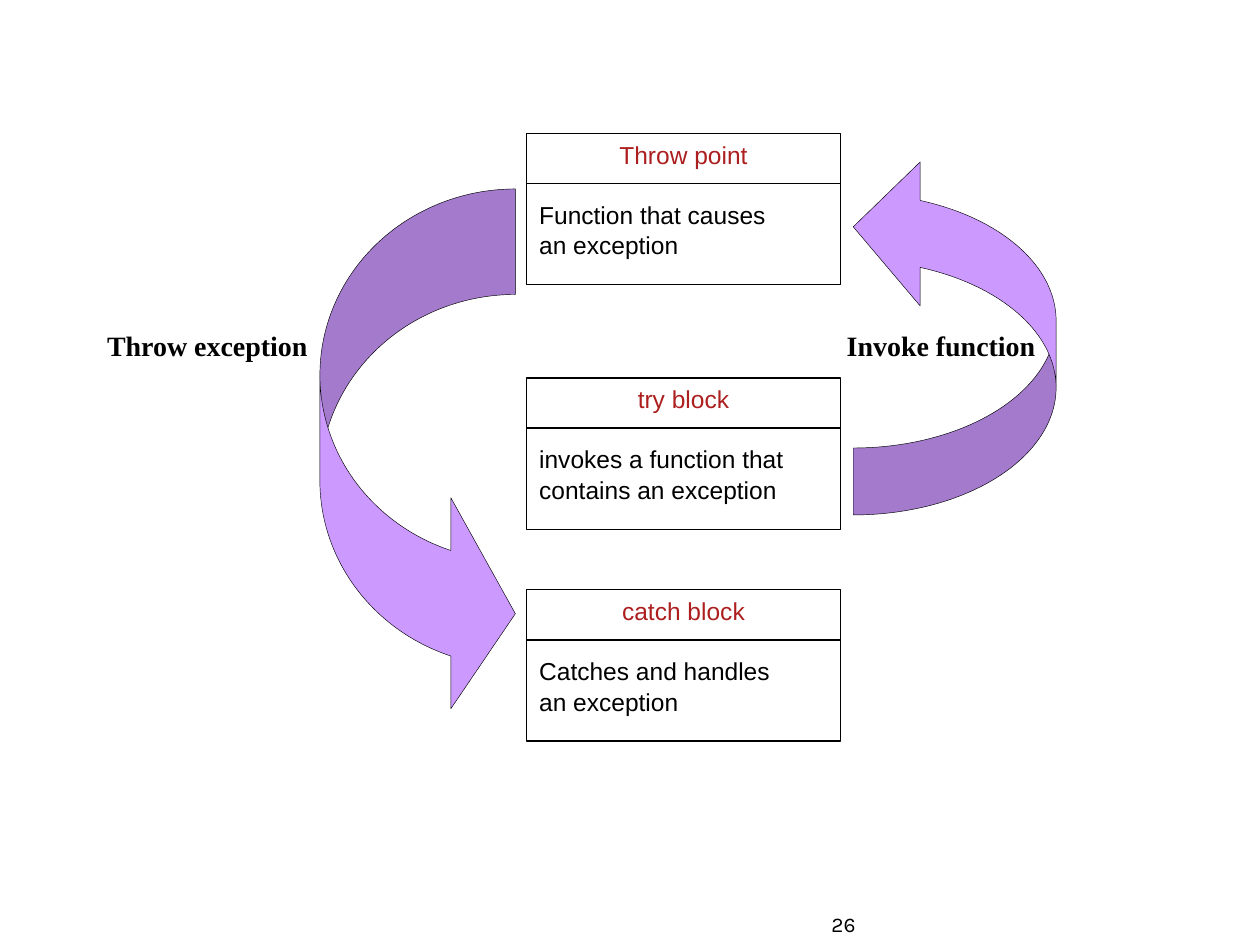
from dataclasses import dataclass

from lxml.etree import SubElement
from pptx import Presentation
from pptx.dml.color import RGBColor
from pptx.enum.shapes import MSO_CONNECTOR, MSO_SHAPE
from pptx.enum.text import MSO_ANCHOR, PP_ALIGN
from pptx.oxml.ns import qn
from pptx.util import Cm, Pt

BLACK, WHITE, RED, LILAC = "000000", "FFFFFF", "AD1F1F", "CC99FF"
BLOCK_LEFT, BLOCK_WIDTH, BLOCK_HEIGHT, HEADER_HEIGHT = 10.62, 6.32, 3.05, 1.01


@dataclass
class Block:
    top: float
    title: str
    lines: tuple[str, ...]


@dataclass
class CurvedArrow:
    left: float
    top: float
    width: float
    height: float
    adjustments: tuple[float, ...]
    rotation: float = 0


@dataclass
class Label:
    text: str
    left: float
    top: float
    width: float
    font: str
    size: float
    bold: bool = False


BLOCKS = (
    Block(2.69, "Throw point", ("Function that causes", "an exception")),
    Block(7.62, "try block", ("invokes a function that contains an exception",)),
    Block(11.89, "catch block", ("Catches and handles", "an exception")),
)
ARROWS = (
    CurvedArrow(6.45, 3.81, 3.94, 10.69, (0.54, 1.08, 0.33)),
    CurvedArrow(17.2, 3.12, 4.09, 7.26, (0.33, 0.71, 0.33), 180),
)
LABELS = (
    Label("Throw exception", 2.16, 6.56, 4.1, "Times New Roman", 16, True),
    Label("Invoke function", 17.07, 6.56, 3.9, "Times New Roman", 16, True),
    Label("26", 16.76, 18.24, 2, "Karla", 12),
)


def rgb(color: str) -> RGBColor:
    return RGBColor.from_string(color)


def add_run(p, text: str, font: str, size: float, color: str = BLACK, bold: bool = False) -> None:
    r = p.add_run()
    r.text = text
    r.font.name, r.font.size, r.font.bold = font, Pt(size), bold
    r.font.color.rgb = rgb(color)


def style_shape(sp, fill: str, line_width: float) -> None:
    sp.shadow.inherit = False
    sp.fill.solid()
    sp.fill.fore_color.rgb = rgb(fill)
    sp.line.color.rgb = rgb(BLACK)
    sp.line.width = Pt(line_width)


def add_block(s, block: Block) -> None:
    """Draw a box with a centred title, a divider and its description."""
    sp = s.shapes.add_shape(MSO_SHAPE.RECTANGLE, Cm(BLOCK_LEFT), Cm(block.top),
                            Cm(BLOCK_WIDTH), Cm(BLOCK_HEIGHT))
    style_shape(sp, WHITE, 0.75)
    tf = sp.text_frame
    tf.word_wrap = True
    tf.vertical_anchor = MSO_ANCHOR.TOP
    title = tf.paragraphs[0]
    title.alignment = PP_ALIGN.CENTER
    add_run(title, block.title, "Arial", 14, RED)
    for i, line in enumerate(block.lines):
        p = tf.add_paragraph()
        p.alignment = PP_ALIGN.LEFT
        p.line_spacing = 1.04
        p.space_before = Pt(0 if i else 17)
        add_run(p, line, "Arial", 14)

    y = Cm(block.top + HEADER_HEIGHT)
    divider = s.shapes.add_connector(MSO_CONNECTOR.STRAIGHT, Cm(BLOCK_LEFT), y,
                                     Cm(BLOCK_LEFT + BLOCK_WIDTH), y)
    divider.line.color.rgb = rgb(BLACK)
    divider.line.width = Pt(0.75)
    SubElement(divider._element.spPr, qn("a:effectLst"))


def add_arrow(s, arrow: CurvedArrow) -> None:
    sp = s.shapes.add_shape(MSO_SHAPE.CURVED_RIGHT_ARROW, Cm(arrow.left), Cm(arrow.top),
                            Cm(arrow.width), Cm(arrow.height))
    for i, value in enumerate(arrow.adjustments):
        sp.adjustments[i] = value
    sp.rotation = arrow.rotation
    style_shape(sp, LILAC, 0.25)


def add_label(s, label: Label) -> None:
    sp = s.shapes.add_textbox(Cm(label.left), Cm(label.top), Cm(label.width), Cm(0.8))
    tf = sp.text_frame
    tf.margin_left = tf.margin_right = tf.margin_top = tf.margin_bottom = 0
    tf.vertical_anchor = MSO_ANCHOR.MIDDLE
    add_run(tf.paragraphs[0], label.text, label.font, label.size, bold=label.bold)


def main() -> None:
    prs = Presentation()
    prs.slide_width, prs.slide_height = Cm(25.4), Cm(19.05)
    s = prs.slides.add_slide(prs.slide_layouts[6])
    for label in LABELS:
        add_label(s, label)
    for block in BLOCKS:
        add_block(s, block)
    for arrow in ARROWS:
        add_arrow(s, arrow)
    prs.save("out.pptx")


if __name__ == "__main__":
    main()
